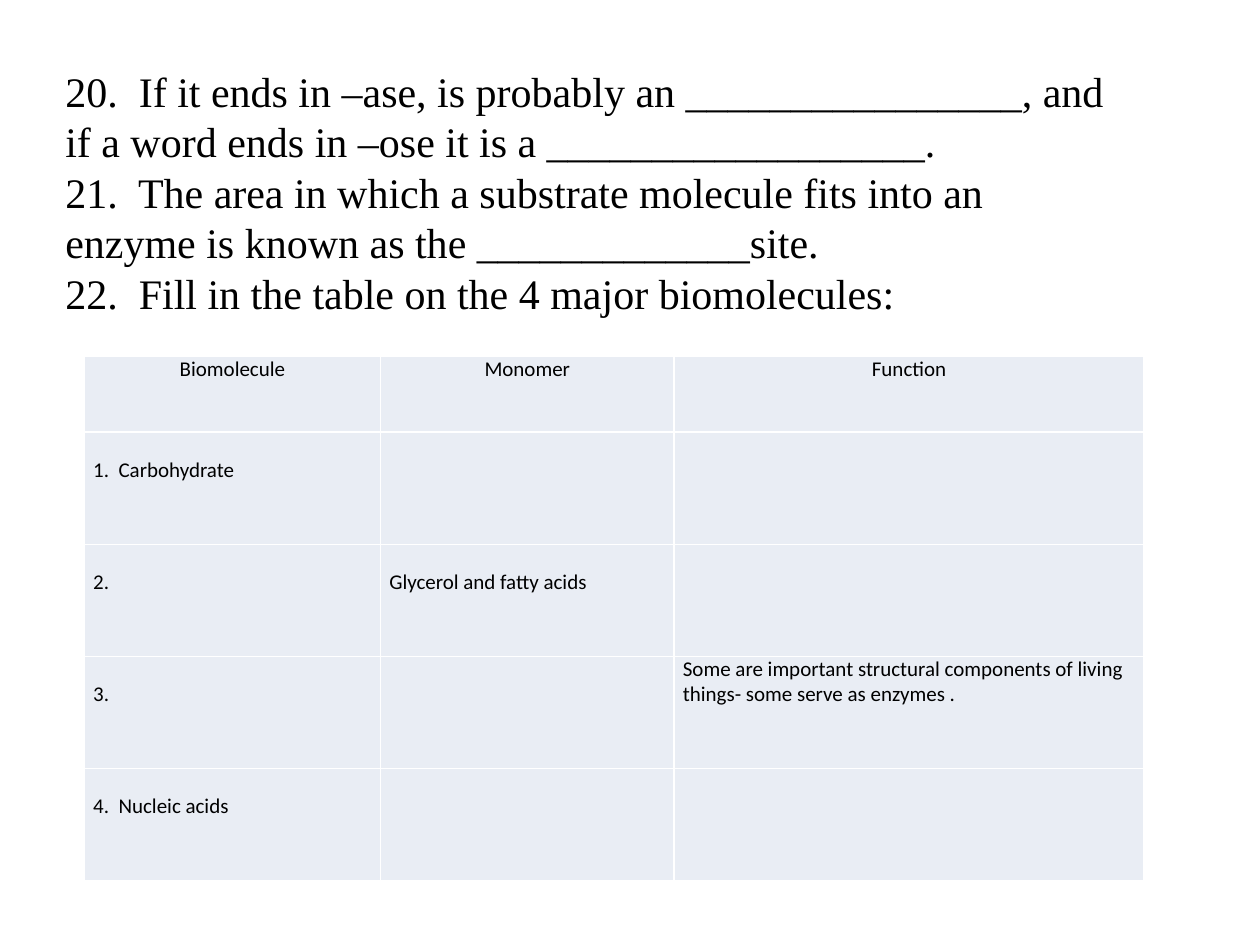
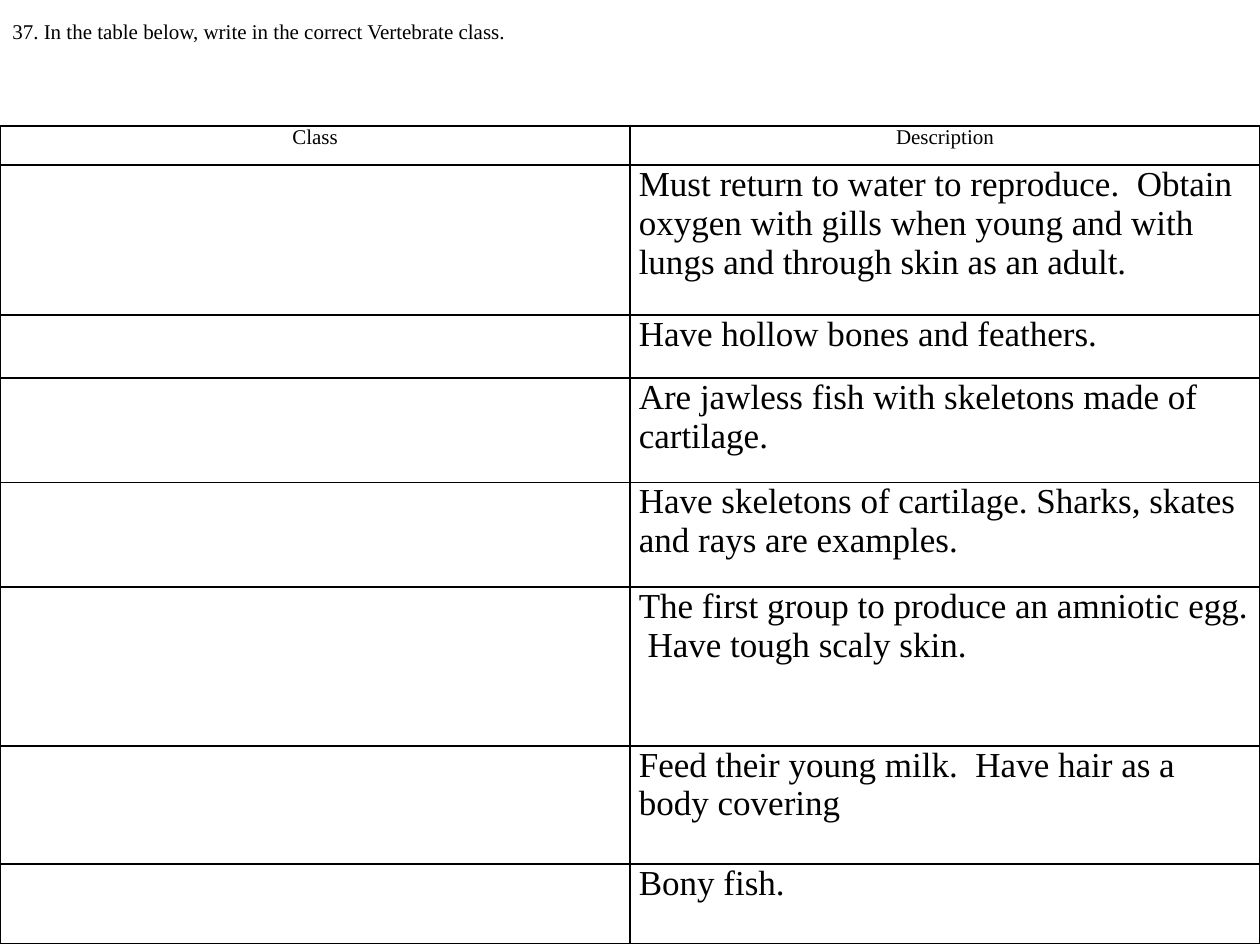
from pptx import Presentation
from pptx.dml.color import RGBColor as Rgb
from pptx.enum.text import MSO_ANCHOR as Anchor, PP_ALIGN as Align
from pptx.oxml.ns import qn
from pptx.util import Inches, Pt
from lxml.etree import SubElement as Sub

HEX = {"ink": "000000", "pale": "E9EDF4", "white": "FFFFFF"}
SERIF, SANS = "Times New Roman", "Calibri"

ITEMS = [
    "20.  If it ends in –ase, is probably an ________________, "
    "and if a word ends in –ose it is a __________________.",
    "21.  The area in which a substrate molecule fits into an "
    "enzyme is known as the _____________site.",
    "22.  Fill in the table on the 4 major biomolecules:",
]
MOLECULES = [
    ["Biomolecule", "Monomer", "Function"],
    ["1.  Carbohydrate", "", ""],
    ["2.", "Glycerol and fatty acids", ""],
    ["3.", "", "Some are important structural components of living "
               "things- some serve as enzymes ."],
    ["4.  Nucleic acids", "", ""],
]
TRAITS = [
    "Must return to water to reproduce.  Obtain oxygen with gills when "
    "young and with lungs and through skin as an adult.",
    "Have hollow bones and feathers.",
    "Are jawless fish with skeletons made of cartilage.",
    "Have skeletons of cartilage. Sharks, skates and rays are examples.",
    "The first group to produce an amniotic egg.  Have tough scaly skin.",
    "Feed their young milk.  Have hair as a body covering",
    "Bony fish.",
]


def style(frame, font, size, align=Align.LEFT):
    for para in frame.paragraphs:
        para.alignment = align
        for run in para.runs:
            run.font.name = font
            run.font.size = Pt(size)
            run.font.color.rgb = Rgb.from_string(HEX["ink"])


def add_text(slide, box, lines, size, foot=0.05):
    """Add question text, centred in its box above a bottom inset."""
    frame = slide.shapes.add_textbox(*map(Inches, box)).text_frame
    frame.word_wrap = True
    frame.vertical_anchor = Anchor.MIDDLE
    frame.margin_bottom = Inches(foot)
    frame.text = "\n".join(lines)
    style(frame, SERIF, size)


def set_edges(cell, color):
    props = cell._tc.get_or_add_tcPr()
    for side in ("lnL", "lnR", "lnT", "lnB"):
        line = Sub(props, qn(f"a:{side}"), w=str(Pt(1)))
        fill = Sub(line, qn("a:solidFill"))
        Sub(fill, qn("a:srgbClr"), val=HEX[color])


def add_grid(slide, box, cols, rows, data, font, size, edge, fill=None):
    """Add a table with a centred 12-point header row."""
    shape = slide.shapes.add_table(len(rows), len(cols), *map(Inches, box))
    table = shape.table
    table.first_row = table.horz_banding = False
    for col, width in zip(table.columns, cols):
        col.width = Inches(width)
    for row, height, texts in zip(table.rows, rows, data):
        row.height = Inches(height)
        head = texts is data[0]
        for cell, text in zip(row.cells, texts):
            cell.margin_left = cell.margin_right = Inches(0.07)
            cell.margin_top = cell.margin_bottom = 0
            set_edges(cell, edge)
            if fill:
                cell.fill.solid()
                cell.fill.fore_color.rgb = Rgb.from_string(HEX[fill])
            else:
                cell.fill.background()
            if text:
                cell.text = text
                style(cell.text_frame, font, 12 if head else size,
                      Align.CENTER if head else Align.LEFT)
    return table


def add_molecules(slide):
    add_text(slide, (0.42, 0.45, 8.5, 2.42), ITEMS, 24, foot=0.33)
    table = add_grid(slide, (0.67, 2.83, 8.41, 4.16), [2.35, 2.33, 3.73],
                     [0.6] + [0.89] * 4, MOLECULES, SANS, 12, "white", "pale")
    for row in list(table.rows)[1:]:
        for cell in list(row.cells)[:2]:
            cell.margin_top = Inches(0.2)


def add_classes(slide):
    data = [["Class", "Description"]] + [["", trait] for trait in TRAITS]
    add_grid(slide, (0, 1, 10, 6.5), [5, 5],
             [0.31, 1.19, 0.5, 0.83, 0.83, 1.26, 0.94, 0.63],
             data, SERIF, 20, "ink")
    add_text(slide, (0, 0, 10, 0.5), [
        "37. In the table below, write in the correct Vertebrate class."], 12)


def main():
    deck = Presentation()
    deck.slide_width, deck.slide_height = Inches(10), Inches(7.5)
    for build in (add_molecules, add_classes):
        slide = deck.slides.add_slide(deck.slide_layouts[6])
        slide.background.fill.solid()
        slide.background.fill.fore_color.rgb = Rgb.from_string(HEX["white"])
        build(slide)
    deck.save("out.pptx")


if __name__ == "__main__":
    main()
